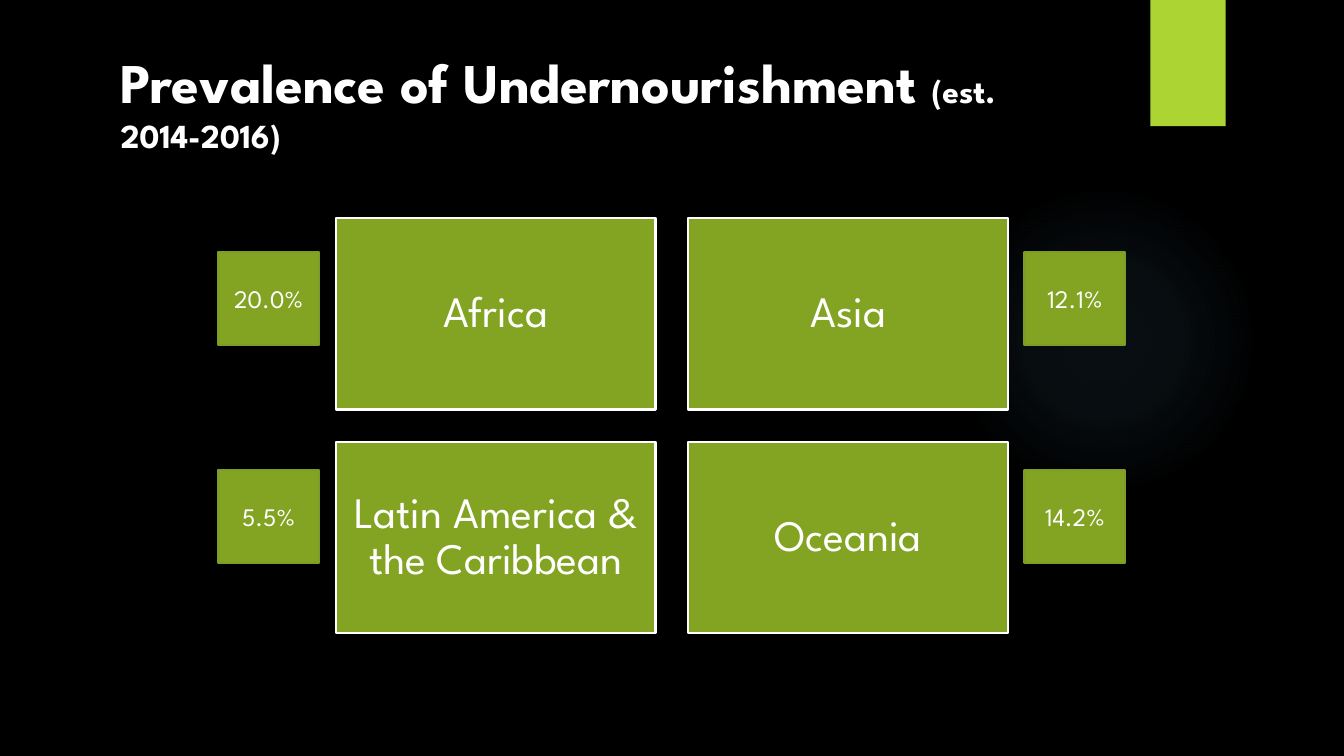
import lxml.etree
import pptx
import pptx.util
import pptx.dml.color
import pptx.enum.shapes
import pptx.enum.text
import pptx.oxml
import pptx.oxml.ns

Cm, Pt = pptx.util.Cm, pptx.util.Pt
RGBColor = pptx.dml.color.RGBColor
SHAPE = pptx.enum.shapes.MSO_SHAPE
ALIGN = pptx.enum.text.PP_ALIGN
ANCHOR = pptx.enum.text.MSO_ANCHOR

FONT = "League Spartan"
BLACK = RGBColor(0x00, 0x00, 0x00)
WHITE = RGBColor(0xFF, 0xFF, 0xFF)
LIME = RGBColor(0xAC, 0xD4, 0x33)
GREEN = RGBColor(0x83, 0xA3, 0x22)
EDGE = RGBColor(0x7F, 0x9D, 0x26)
GLOW = RGBColor(0x7A, 0xC4, 0xF0)


def add_run(p, text, size=18, bold=False):
    r = p.add_run()
    r.text = text
    r.font.name = FONT
    r.font.size = Pt(size)
    r.font.bold = bold
    r.font.color.rgb = WHITE


def add_box(s, x, y, w, h, fill, line=None, text="", size=18, inset=0.25, spacing=1.0):
    sp = s.shapes.add_shape(SHAPE.RECTANGLE, Cm(x), Cm(y), Cm(w), Cm(h))
    sp.shadow.inherit = False
    sp.fill.solid()
    sp.fill.fore_color.rgb = fill
    if line is None:
        sp.line.fill.background()
    else:
        sp.line.color.rgb = line
        sp.line.width = Pt(1.5)
    if text:
        tf = sp.text_frame
        tf.word_wrap = True
        tf.vertical_anchor = ANCHOR.MIDDLE
        tf.margin_left = tf.margin_right = Cm(inset)
        p = tf.paragraphs[0]
        p.alignment = ALIGN.CENTER
        p.line_spacing = spacing
        add_run(p, text, size=size)
    return sp


prs = pptx.Presentation()
prs.slide_width, prs.slide_height = Cm(33.87), Cm(19.05)
s = prs.slides.add_slide(prs.slide_layouts[6])
s.background.fill.solid()
s.background.fill.fore_color.rgb = BLACK

# Soft glow: a radial gradient fading to transparent
glow = s.shapes.add_shape(SHAPE.OVAL, Cm(23.9), Cm(4.65), Cm(7.82), Cm(7.82))
glow.shadow.inherit = False
glow.line.fill.background()
glow.fill.gradient()
grad = glow.fill._xPr.find(pptx.oxml.ns.qn("a:gradFill"))
stops = "".join(
    f'<a:gs pos="{pos * 1000}"><a:srgbClr val="{GLOW}"><a:alpha val="{alpha * 1000}"/></a:srgbClr></a:gs>'
    for pos, alpha in [(0, 7), (36, 6), (69, 0), (100, 0)])
grad.getparent().replace(grad, pptx.oxml.parse_xml(
    f'<a:gradFill {pptx.oxml.ns.nsdecls("a")}><a:gsLst>{stops}</a:gsLst><a:path path="circle">'
    '<a:fillToRect l="50000" t="50000" r="50000" b="50000"/></a:path></a:gradFill>'))

# Corner tab
add_box(s, 28.99, 0, 1.9, 3.18, LIME)

# Title
title = s.shapes.add_textbox(Cm(2.79), Cm(1.07), Cm(24.31), Cm(3))
title.text_frame.word_wrap = True
p = title.text_frame.paragraphs[0]
add_run(p, "Prevalence of Undernourishment ", size=40, bold=True)
add_run(p, "(est. 2014-2016)", size=24, bold=True)

# Regions in a two by two grid, each with its rate on the outer side
regions = [
    [("Africa", "20.0%"), ("Asia", "12.1%")],
    [("Latin America & the Caribbean", "5.5%"), ("Oceania", "14.2%")],
]
for row, pair in enumerate(regions):
    for col, (region, rate) in enumerate(pair):
        add_box(s, 8.47 + 8.88 * col, 5.49 + 5.64 * row, 8.05, 4.83, GREEN, line=WHITE,
                text=region, size=31, inset=0.33, spacing=0.9)
        add_box(s, 5.5 + 20.32 * col, 6.35 + 5.5 * row, 2.54, 2.34, GREEN, line=EDGE, text=rate)

prs.save("out.pptx")
